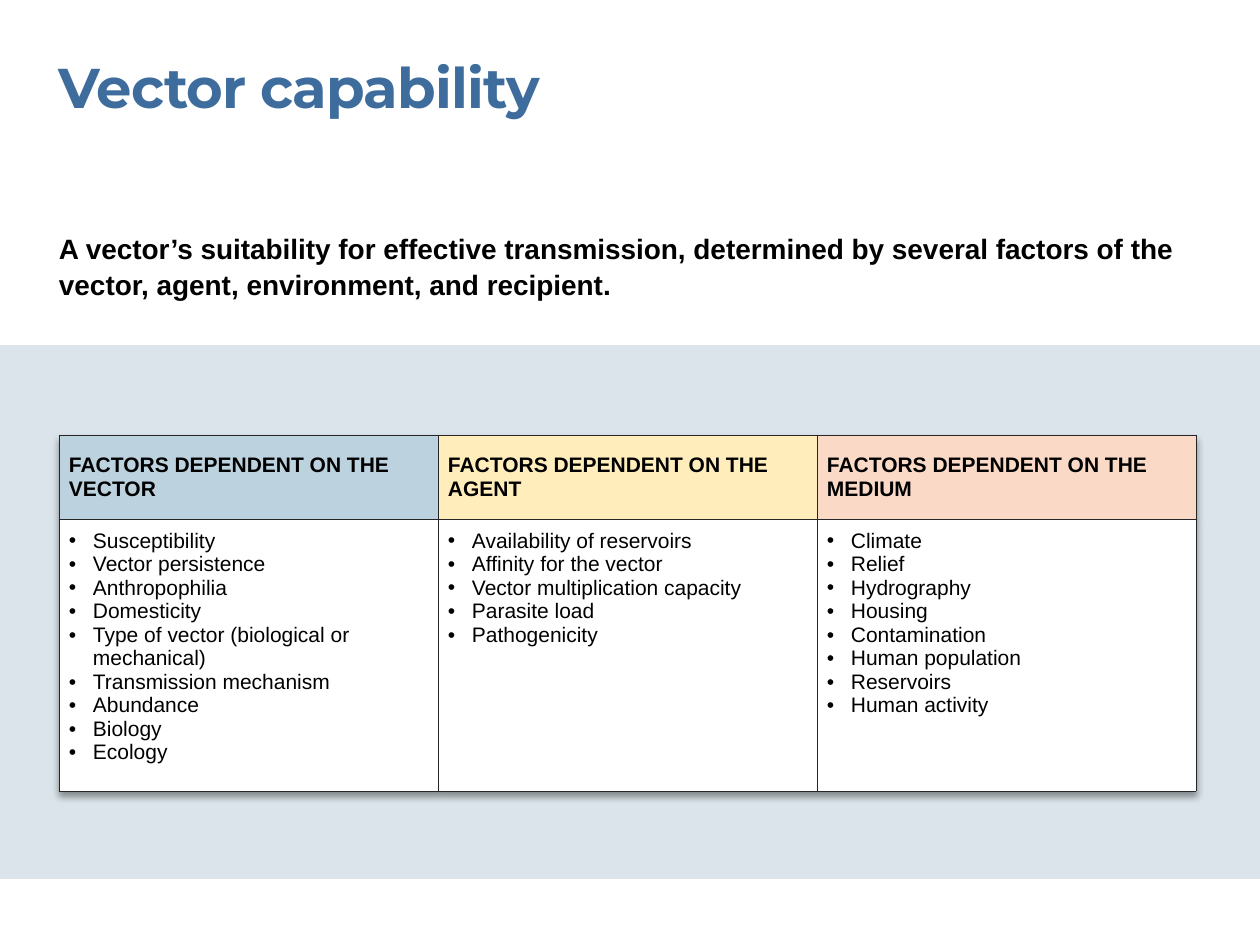
from dataclasses import dataclass

from lxml.etree import SubElement
from pptx import Presentation
from pptx.dml.color import RGBColor
from pptx.enum.shapes import MSO_SHAPE
from pptx.enum.text import MSO_ANCHOR, MSO_AUTO_SIZE
from pptx.oxml import parse_xml
from pptx.oxml.ns import nsdecls, qn
from pptx.util import Pt


@dataclass(frozen=True)
class Theme:
    """Colours, fonts and type sizes of the slide."""
    title: str = "3D6C9D"
    text: str = "000000"
    band: str = "DBE4EA"
    border: str = "262626"
    paper: str = "FFFFFF"
    title_font: str = "Montserrat"
    body_font: str = "Arial"
    title_size: int = 32
    lead_size: int = 16
    table_size: int = 12


THEME = Theme()
PX_PER_INCH = 126
MARGIN = 59
COLUMN_WIDTH = 379
ROW_HEIGHTS = (84, 272)
BULLET_INDENT = 24

FACTORS = (
    ("FACTORS DEPENDENT ON THE VECTOR", "BCD2DE", (
        "Susceptibility", "Vector persistence", "Anthropophilia", "Domesticity",
        "Type of vector (biological or mechanical)", "Transmission mechanism",
        "Abundance", "Biology", "Ecology")),
    ("FACTORS DEPENDENT ON THE AGENT", "FFEDBC", (
        "Availability of reservoirs", "Affinity for the vector",
        "Vector multiplication capacity", "Parasite load", "Pathogenicity")),
    ("FACTORS DEPENDENT ON THE MEDIUM", "FADAC7", (
        "Climate", "Relief", "Hydrography", "Housing", "Contamination",
        "Human population", "Reservoirs", "Human activity")),
)


def px(length):
    """Turn pixels into EMU."""
    return round(length * 914400 / PX_PER_INCH)


def style(paragraph, size, bold=True, font=THEME.body_font, color=THEME.text):
    """Set the type of a whole paragraph."""
    paragraph.font.name = font
    paragraph.font.size = Pt(size)
    paragraph.font.bold = bold
    paragraph.font.color.rgb = RGBColor.from_string(color)


def add_band(slide, top, width, height):
    """Add the tinted band behind the table."""
    band = slide.shapes.add_shape(MSO_SHAPE.RECTANGLE, 0, px(top), px(width), px(height))
    band.shadow.inherit = False
    band.fill.solid()
    band.fill.fore_color.rgb = RGBColor.from_string(THEME.band)
    band.line.fill.background()


def add_text(slide, text, top, width, height):
    """Add a text box without insets and return its paragraph."""
    box = slide.shapes.add_textbox(px(MARGIN), px(top), px(width), px(height))
    frame = box.text_frame
    frame.word_wrap = True
    frame.auto_size = MSO_AUTO_SIZE.SHAPE_TO_FIT_TEXT
    frame.margin_left = frame.margin_right = frame.margin_top = frame.margin_bottom = 0
    frame.text = text
    return frame.paragraphs[0]


def add_bullet(paragraph):
    """Give a paragraph a hanging bullet."""
    properties = paragraph._p.get_or_add_pPr()
    properties.set("marL", str(px(BULLET_INDENT)))
    properties.set("indent", str(-px(BULLET_INDENT)))
    marks = (
        f'<a:buClr {nsdecls("a")}><a:srgbClr val="{THEME.text}"/></a:buClr>',
        f'<a:buFont {nsdecls("a")} typeface="{THEME.body_font}"/>',
        f'<a:buChar {nsdecls("a")} char="•"/>',
    )
    for position, mark in enumerate(marks):
        properties.insert(position, parse_xml(mark))


def format_cell(cell, fill, vertical_inset):
    """Set the borders, fill and insets of a cell."""
    properties = cell._tc.get_or_add_tcPr()
    for side in ("lnL", "lnR", "lnT", "lnB"):
        line = SubElement(properties, qn(f"a:{side}"), w=str(Pt(0.5)))
        solid = SubElement(line, qn("a:solidFill"))
        SubElement(solid, qn("a:srgbClr"), val=THEME.border)
    cell.fill.solid()
    cell.fill.fore_color.rgb = RGBColor.from_string(fill)
    cell.margin_left = cell.margin_right = px(10)
    cell.margin_top = cell.margin_bottom = px(vertical_inset)


def add_table_shadow(table):
    """Add a soft shadow below the table."""
    table._tbl.tblPr.insert(0, parse_xml(
        f'<a:effectLst {nsdecls("a")}>'
        '<a:outerShdw blurRad="50800" dist="38100" dir="5400000" algn="t" rotWithShape="0">'
        '<a:srgbClr val="000000"><a:alpha val="40000"/></a:srgbClr>'
        '</a:outerShdw></a:effectLst>'))


def add_factor_table(slide, top):
    """Add the table with one column per group of factors."""
    table = slide.shapes.add_table(
        len(ROW_HEIGHTS), len(FACTORS), px(MARGIN), px(top),
        px(COLUMN_WIDTH * len(FACTORS)), px(sum(ROW_HEIGHTS))).table
    table.first_row = table.horz_banding = False
    add_table_shadow(table)
    for row, height in zip(table.rows, ROW_HEIGHTS):
        row.height = px(height)
    for index, (heading, tint, factors) in enumerate(FACTORS):
        table.columns[index].width = px(COLUMN_WIDTH)
        header, body = table.cell(0, index), table.cell(1, index)
        format_cell(header, tint, 6)
        header.vertical_anchor = MSO_ANCHOR.MIDDLE
        header.text = heading
        style(header.text_frame.paragraphs[0], THEME.table_size)
        format_cell(body, THEME.paper, 10)
        body.text = "\n".join(factors)
        for paragraph in body.text_frame.paragraphs:
            style(paragraph, THEME.table_size, bold=False)
            add_bullet(paragraph)


def main():
    """Build and save the slide."""
    presentation = Presentation()
    presentation.slide_width, presentation.slide_height = px(1260), px(945)
    slide = presentation.slides.add_slide(presentation.slide_layouts[6])
    add_band(slide, 345, 1260, 534)
    title = add_text(slide, "Vector capability", 53, 1077, 68)
    style(title, THEME.title_size, font=THEME.title_font, color=THEME.title)
    title._p.pPr.get_or_add_defRPr().set("spc", "-50")
    add_factor_table(slide, 435)
    lead = add_text(
        slide,
        "A vector’s suitability for effective transmission, determined by several "
        "factors of the vector, agent, environment, and recipient.",
        229, 1137, 68)
    style(lead, THEME.lead_size)
    lead.line_spacing = 1.07
    presentation.save("out.pptx")


if __name__ == "__main__":
    main()
